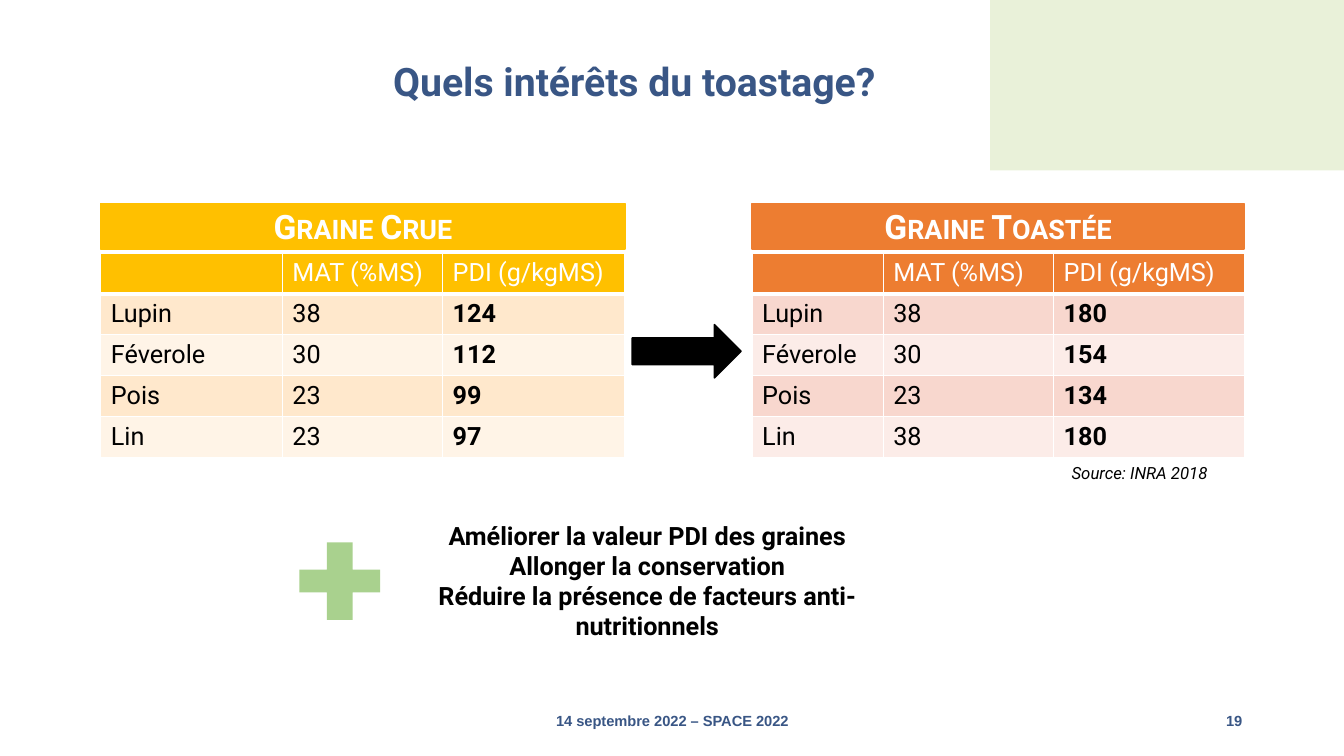
from dataclasses import dataclass

from lxml import etree
from pptx import Presentation
from pptx.dml.color import RGBColor
from pptx.enum.shapes import MSO_SHAPE
from pptx.enum.text import MSO_ANCHOR, PP_ALIGN
from pptx.oxml.ns import qn
from pptx.util import Inches, Pt

RECTANGLE, ARROW, PLUS = MSO_SHAPE.RECTANGLE, MSO_SHAPE.RIGHT_ARROW, MSO_SHAPE.CROSS
LEFT, CENTER, RIGHT = PP_ALIGN.LEFT, PP_ALIGN.CENTER, PP_ALIGN.RIGHT
TOP, MIDDLE = MSO_ANCHOR.TOP, MSO_ANCHOR.MIDDLE


@dataclass(frozen=True)
class Theme:
    body_font: str = "Roboto"
    footer_font: str = "Arial"
    navy: str = "395685"
    black: str = "000000"
    white: str = "FFFFFF"
    corner: str = "E9F1D9"
    plus: str = "A9D18E"
    raw: tuple = ("FFC000", "FFE8CC", "FFF4E7")  # header, odd rows, even rows
    toasted: tuple = ("ED7D31", "F8D7CE", "FCECE8")
    title_size: float = 28
    heading_size: float = 24
    body_size: float = 18
    source_size: float = 12
    footer_size: float = 10.5


THEME = Theme()
COLUMNS = ["", "MAT (%MS)", "PDI (g/kgMS)"]
RAW_SEEDS = [("Lupin", 38, 124), ("Féverole", 30, 112), ("Pois", 23, 99), ("Lin", 23, 97)]
TOASTED_SEEDS = [("Lupin", 38, 180), ("Féverole", 30, 154), ("Pois", 23, 134), ("Lin", 38, 180)]
BENEFITS = [
    "Améliorer la valeur PDI des graines",
    "Allonger la conservation",
    "Réduire la présence de facteurs anti-nutritionnels",
]


def rgb(color):
    return RGBColor.from_string(color)


def write(frame, lines, size, color, bold=False, italic=False, align=LEFT,
          anchor=TOP, font=THEME.body_font):
    frame.text = "\n".join(lines)
    frame.vertical_anchor = anchor
    for paragraph in frame.paragraphs:
        paragraph.alignment = align
        for run in paragraph.runs:
            run.font.name, run.font.size = font, Pt(size)
            run.font.bold, run.font.italic = bold, italic
            run.font.color.rgb = rgb(color)


def add_text(slide, box, lines, size, color, wrap=True, **style):
    frame = slide.shapes.add_textbox(*map(Inches, box)).text_frame
    write(frame, lines, size, color, **style)
    frame.word_wrap = wrap
    return frame


def add_block(slide, kind, box, color, outlined=False):
    block = slide.shapes.add_shape(kind, *map(Inches, box))
    block.shadow.inherit = False
    block.fill.solid()
    block.fill.fore_color.rgb = rgb(color)
    if outlined:
        block.line.color.rgb = rgb(color)
        block.line.width = Pt(1)
    else:
        block.line.fill.background()
    return block


def add_borders(cell, bottom_width):
    properties = cell._tc.get_or_add_tcPr()
    for side, width in (("L", 1), ("R", 1), ("T", 1), ("B", bottom_width)):
        line = etree.SubElement(properties, qn(f"a:ln{side}"), w=str(Pt(width)))
        fill = etree.SubElement(line, qn("a:solidFill"))
        etree.SubElement(fill, qn("a:srgbClr"), val=THEME.white)


def add_seed_table(slide, box, heading, seeds, palette, widths):
    left, top, width, height = box
    heading_height, gap = 0.45, 0.04

    # Heading band
    band = add_block(slide, RECTANGLE, (left, top, width, heading_height), palette[0], True)
    write(band.text_frame, [heading], THEME.heading_size, THEME.white, bold=True,
          align=CENTER, anchor=MIDDLE)
    band.text_frame.paragraphs[0].runs[0].font._element.set("cap", "small")

    # Values
    rows = [COLUMNS, *seeds]
    table_top = top + heading_height + gap
    table_height = height - heading_height - gap
    table = slide.shapes.add_table(len(rows), len(COLUMNS), Inches(left), Inches(table_top),
                                   Inches(width), Inches(table_height)).table
    for column, column_width in zip(table.columns, widths):
        column.width = Inches(column_width)
    for r, values in enumerate(rows):
        header = r == 0
        table.rows[r].height = Inches(table_height / len(rows))
        for c, value in enumerate(values):
            cell = table.cell(r, c)
            add_borders(cell, 3 if header else 1)
            cell.fill.solid()
            cell.fill.fore_color.rgb = rgb(palette[0 if header else 2 - r % 2])
            write(cell.text_frame, [str(value)], THEME.body_size,
                  THEME.white if header else THEME.black, bold=c == 2 and not header)


def add_header(slide, box):
    left, top, width, height = box
    add_block(slide, RECTANGLE, (left + width - 3.51, top, 3.51, 1.69), THEME.corner)
    title = add_text(slide, (left + 3.8, top, 6.88, height), ["Quels intérêts du toastage?"],
                     THEME.title_size, THEME.navy, bold=True, anchor=MIDDLE)
    title.paragraphs[0].line_spacing = 0.9


def add_comparison(slide, box):
    left, top, width, height = box
    raw_width, toasted_width = 5.2, 4.88
    add_seed_table(slide, (left, top, raw_width, height), "Graine Crue", RAW_SEEDS,
                   THEME.raw, (1.8, 1.59, 1.81))
    add_seed_table(slide, (left + width - toasted_width, top, toasted_width, height),
                   "Graine Toastée", TOASTED_SEEDS, THEME.toasted, (1.3, 1.69, 1.89))
    add_block(slide, ARROW, (left + raw_width + 0.07, top + 1.2, 1.08, 0.53), THEME.black, True)
    add_text(slide, (left + width - 1.81, top + height, 1.64, 0.3), ["Source: INRA 2018"],
             THEME.source_size, THEME.black, wrap=False, italic=True)


def add_benefits(slide, box):
    left, top, width, height = box
    plus = add_block(slide, PLUS, (left, top + 0.27, 0.8, 0.77), THEME.plus)
    plus.adjustments[0] = 0.354
    add_text(slide, (left + 0.61, top, width - 0.61, height), BENEFITS,
             THEME.body_size, THEME.black, bold=True, align=CENTER)


def add_footer(slide, box):
    left, top, width, height = box
    style = dict(bold=True, anchor=MIDDLE, font=THEME.footer_font)
    add_text(slide, (left, top, 4.5, height), ["14 septembre 2022 – SPACE 2022"],
             THEME.footer_size, THEME.navy, align=CENTER, **style)
    add_text(slide, (left + width - 3, top, 3, height), ["19"],
             THEME.footer_size, THEME.navy, align=RIGHT, **style)


def main():
    deck = Presentation()
    deck.slide_width, deck.slide_height = Inches(13.33), Inches(7.5)
    slide = deck.slides.add_slide(deck.slide_layouts[6])
    add_header(slide, (0, 0, 13.33, 1.67))
    add_comparison(slide, (1, 2.02, 11.34, 2.52))
    add_benefits(slide, (2.97, 5.11, 6.29, 1.31))
    add_footer(slide, (4.42, 6.95, 8, 0.4))
    deck.save("out.pptx")


if __name__ == "__main__":
    main()
